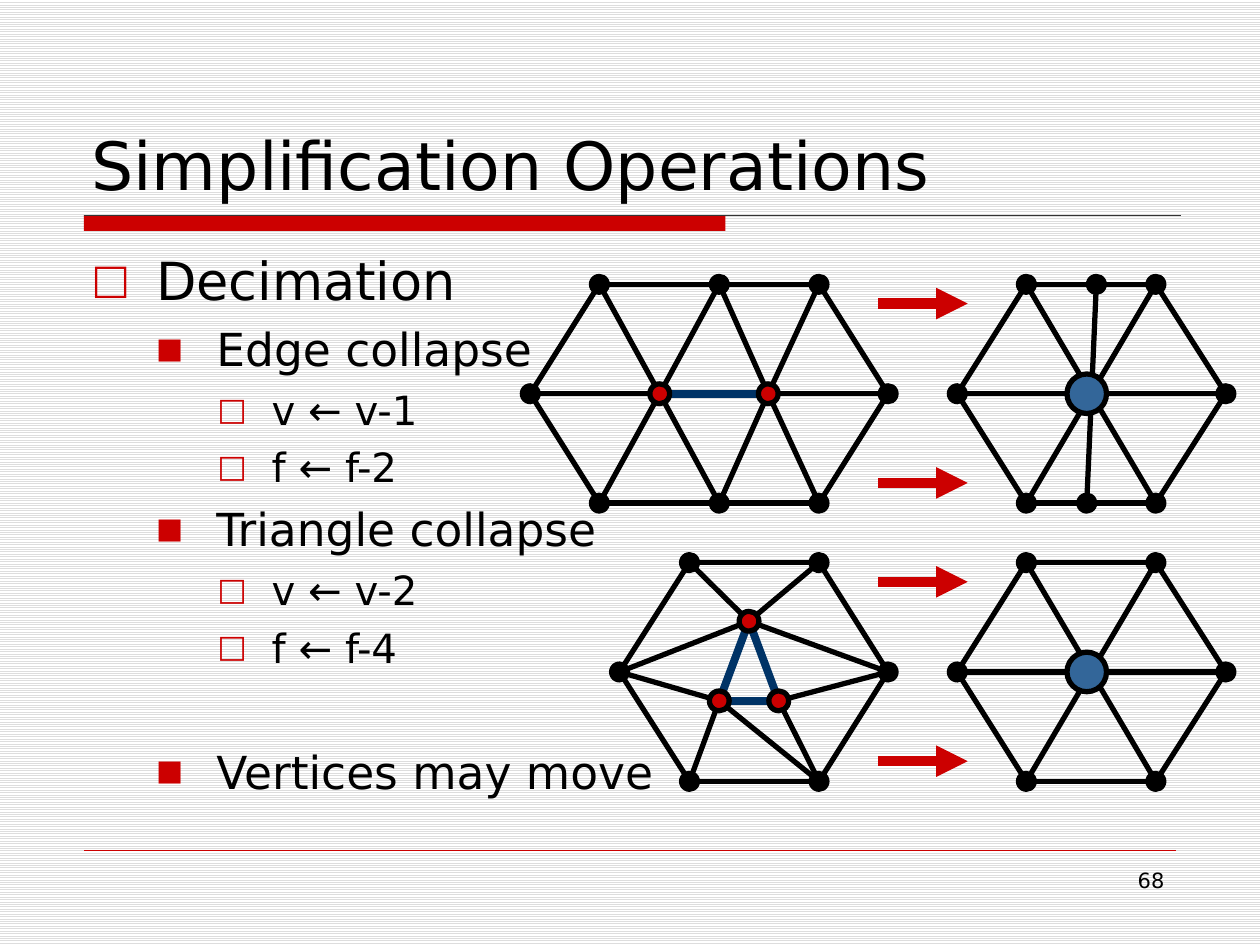
import pptx
import pptx.util
import pptx.dml.color
import pptx.enum.dml
import pptx.enum.shapes
import pptx.enum.text
import pptx.oxml
import pptx.oxml.ns

Pt = pptx.util.Pt
COLORS = {"black": "000000", "red": "CC0000", "navy": "003366", "blue": "336699",
          "rule": "333333", "stripe": "DDDDDD", "white": "FFFFFF"}
FONT = "DejaVu Sans"
LEVELS = [
    {"size": 30, "before": 6, "left": 37, "hang": 37, "bullet": "□", "scale": 78},
    {"size": 26, "before": 6, "left": 71.5, "hang": 34.5, "bullet": "■", "scale": 63},
    {"size": 23, "before": 5.3, "left": 103, "hang": 31, "bullet": "□", "scale": 78},
]


def rgb(name):
    return pptx.dml.color.RGBColor.from_string(COLORS[name])


class SlideBuilder:
    def __init__(self, slide):
        self.slide = slide
        self.shapes = slide.shapes

    def background(self):
        fill = self.slide.background.fill
        fill.patterned()
        fill.pattern = pptx.enum.dml.MSO_PATTERN.LIGHT_HORIZONTAL
        fill.fore_color.rgb = rgb("stripe")
        fill.back_color.rgb = rgb("white")

    def place(self, shape, left, top, width, height):
        bounds = {"left": left, "top": top, "width": width, "height": height}
        for key, value in bounds.items():
            setattr(shape, key, Pt(value))

    def frame(self, shape, anchor):
        settings = {"word_wrap": True, "vertical_anchor": anchor,
                    "auto_size": pptx.enum.text.MSO_AUTO_SIZE.NONE}
        for key, value in settings.items():
            setattr(shape.text_frame, key, value)
        return shape.text_frame

    def label(self, paragraph, text, size, align=pptx.enum.text.PP_ALIGN.LEFT):
        paragraph.alignment = align
        run = paragraph.add_run()
        run.text = text
        for key, value in {"name": FONT, "size": Pt(size)}.items():
            setattr(run.font, key, value)
        run.font.color.rgb = rgb("black")

    def title(self, text, *bounds):
        heading = self.slide.shapes.title
        self.place(heading, *bounds)
        frame = self.frame(heading, pptx.enum.text.MSO_ANCHOR.BOTTOM)
        self.label(frame.paragraphs[0], text, 38)

    def outline(self, items, *bounds):
        body = self.slide.placeholders[1]
        self.place(body, *bounds)
        frame = self.frame(body, pptx.enum.text.MSO_ANCHOR.TOP)
        for index, (level, text, gap) in enumerate(items):
            paragraph = frame.add_paragraph() if index else frame.paragraphs[0]
            style = LEVELS[level]
            paragraph.level = level
            paragraph.space_before = Pt(style["before"] + gap)
            self.label(paragraph, text, style["size"])
            self.bullet(paragraph, style)

    def bullet(self, paragraph, style):
        properties = paragraph._p.get_or_add_pPr()
        properties.set("marL", str(Pt(style["left"])))
        properties.set("indent", str(-Pt(style["hang"])))
        namespace = pptx.oxml.ns.nsdecls("a")
        for xml in (f'<a:buClr {namespace}><a:srgbClr val="{COLORS["red"]}"/></a:buClr>',
                    f'<a:buSzPct {namespace} val="{style["scale"] * 1000}"/>',
                    f'<a:buFont {namespace} typeface="{FONT}"/>',
                    f'<a:buChar {namespace} char="{style["bullet"]}"/>'):
            properties.append(pptx.oxml.parse_xml(xml))

    def page_number(self, text, *bounds):
        box = self.slide.shapes.add_textbox(*map(Pt, bounds))
        frame = self.frame(box, pptx.enum.text.MSO_ANCHOR.TOP)
        self.label(frame.paragraphs[0], text, 12, pptx.enum.text.PP_ALIGN.RIGHT)

    def bar(self, *bounds):
        band = self.shapes.add_shape(pptx.enum.shapes.MSO_SHAPE.RECTANGLE, *map(Pt, bounds))
        band.shadow.inherit = False
        band.fill.solid()
        band.fill.fore_color.rgb = rgb("red")
        band.line.fill.background()

    def line(self, start, end, color="black", width=3):
        connector = self.shapes.add_connector(
            pptx.enum.shapes.MSO_CONNECTOR.STRAIGHT, *map(Pt, (*start, *end)))
        connector.line.color.rgb = rgb(color)
        connector.line.width = Pt(width)
        connector._element.spPr.append(pptx.oxml.parse_xml(
            f'<a:effectLst {pptx.oxml.ns.nsdecls("a")}/>'))
        return connector

    def arrow(self, y):
        connector = self.line((502, y), (553, y), "red", 6)
        connector.line._get_or_add_ln().append(pptx.oxml.parse_xml(
            f'<a:tailEnd {pptx.oxml.ns.nsdecls("a")} type="triangle"/>'))

    def vertex(self, center, fill="black", size=11.3, width=0.75):
        x, y = center
        dot = self.shapes.add_shape(
            pptx.enum.shapes.MSO_SHAPE.OVAL,
            *map(Pt, (x - size / 2, y - size / 2, size, size)))
        dot.shadow.inherit = False
        dot.fill.solid()
        dot.fill.fore_color.rgb = rgb(fill)
        dot.line.color.rgb = rgb("black")
        dot.line.width = Pt(width)

    def mesh(self, rim, edges, inner=None, collapsing=(), hub=None):
        self.shapes = self.slide.shapes.add_group_shape().shapes
        inner = inner or {}
        points = {**rim, **inner}
        for start, end in edges:
            self.line(points[start], points[end])
        for start, end in collapsing:
            self.line(points[start], points[end], "navy", 4.5)
        for point in rim.values():
            self.vertex(point)
        for point in inner.values():
            self.vertex(point, "red", width=3)
        if hub:
            self.vertex(hub, "blue", 22.6, 3)
        self.shapes = self.slide.shapes


def hexagon(xs, top):
    west, left, right, east = xs
    middle, bottom = top + 62.5, top + 125
    return {"W": (west, middle), "NW": (left, top), "NE": (right, top),
            "E": (east, middle), "SE": (right, bottom), "SW": (left, bottom)}


def pairs(text):
    return [edge.split("-") for edge in text.split()]


def main():
    deck = pptx.Presentation()
    deck.slide_width, deck.slide_height = Pt(720), Pt(540)
    page = SlideBuilder(deck.slides.add_slide(deck.slide_layouts[1]))
    page.background()
    page.bar(48, 123, 366.5, 9)
    page.line((48, 123), (675, 123), "rule", 0.75)
    page.line((48, 486), (672, 486), "red", 0.25)
    page.title("Simplification Operations", 45, 24, 630, 96)
    page.outline([
        (0, "Decimation", 0),
        (1, "Edge collapse", 0), (2, "v ← v-1", 0), (2, "f ← f-2", 0),
        (1, "Triangle collapse", 0), (2, "v ← v-2", 0), (2, "f ← f-4", 0),
        (1, "Vertices may move", 35.5),
    ], 45, 138, 630, 336)

    edge_top, triangle_top = 162.5, 321.5
    for top in (edge_top, triangle_top):
        for offset in (11, 113.5):
            page.arrow(top + offset)

    border = pairs("W-NW NW-NE NE-E E-SE SE-SW SW-W")
    spokes = pairs("W-E NW-SE NE-SW")
    result_xs = (547, 586.5, 660.5, 700.5)

    before_edge = hexagon((303, 342.5, 468, 507.5), edge_top)
    before_edge.update(N=(411, edge_top), S=(411, edge_top + 125))
    page.mesh(before_edge,
              border + pairs("W-a b-E NW-a N-a SW-a S-a N-b NE-b S-b SE-b"),
              {"a": (377, edge_top + 62.5), "b": (439, edge_top + 62.5)},
              pairs("a-b"))

    after_edge = hexagon(result_xs, edge_top)
    after_edge.update(N=(626.5, edge_top), S=(621, edge_top + 125))
    page.mesh(after_edge, border + spokes + pairs("N-S"), hub=(621, edge_top + 62.5))

    page.mesh(hexagon((354, 394, 468, 507.5), triangle_top),
              border + pairs("NW-a NE-a W-a E-a W-b SW-b SE-b E-c SE-c"),
              {"a": (428, 355), "b": (411, 400.5), "c": (445, 400.5)},
              pairs("a-b b-c a-c"))

    page.mesh(hexagon(result_xs, triangle_top), border + spokes,
              hub=(621, triangle_top + 62.5))
    page.page_number("68", 516, 492, 156.5, 37.5)
    deck.save("out.pptx")


if __name__ == "__main__":
    main()
